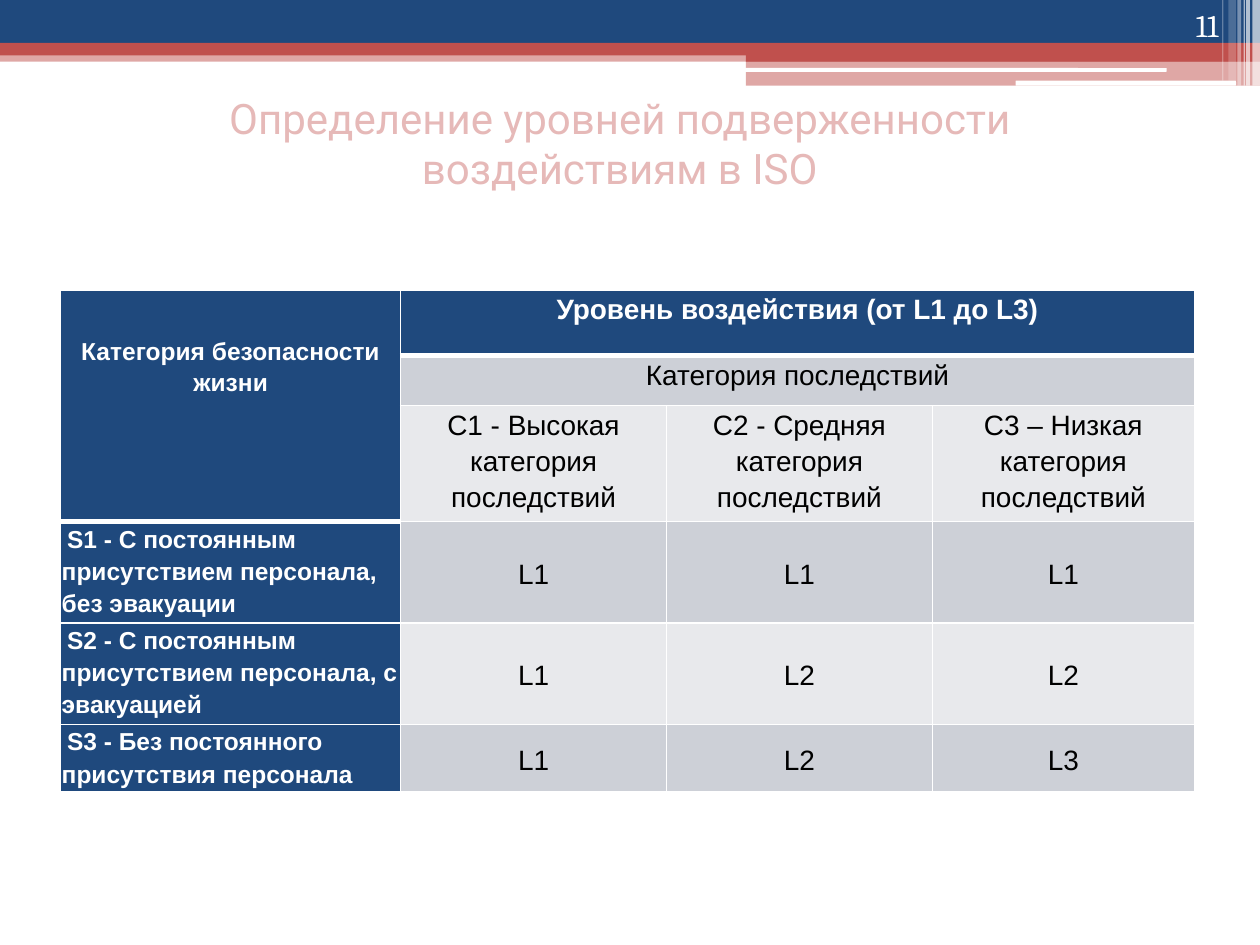
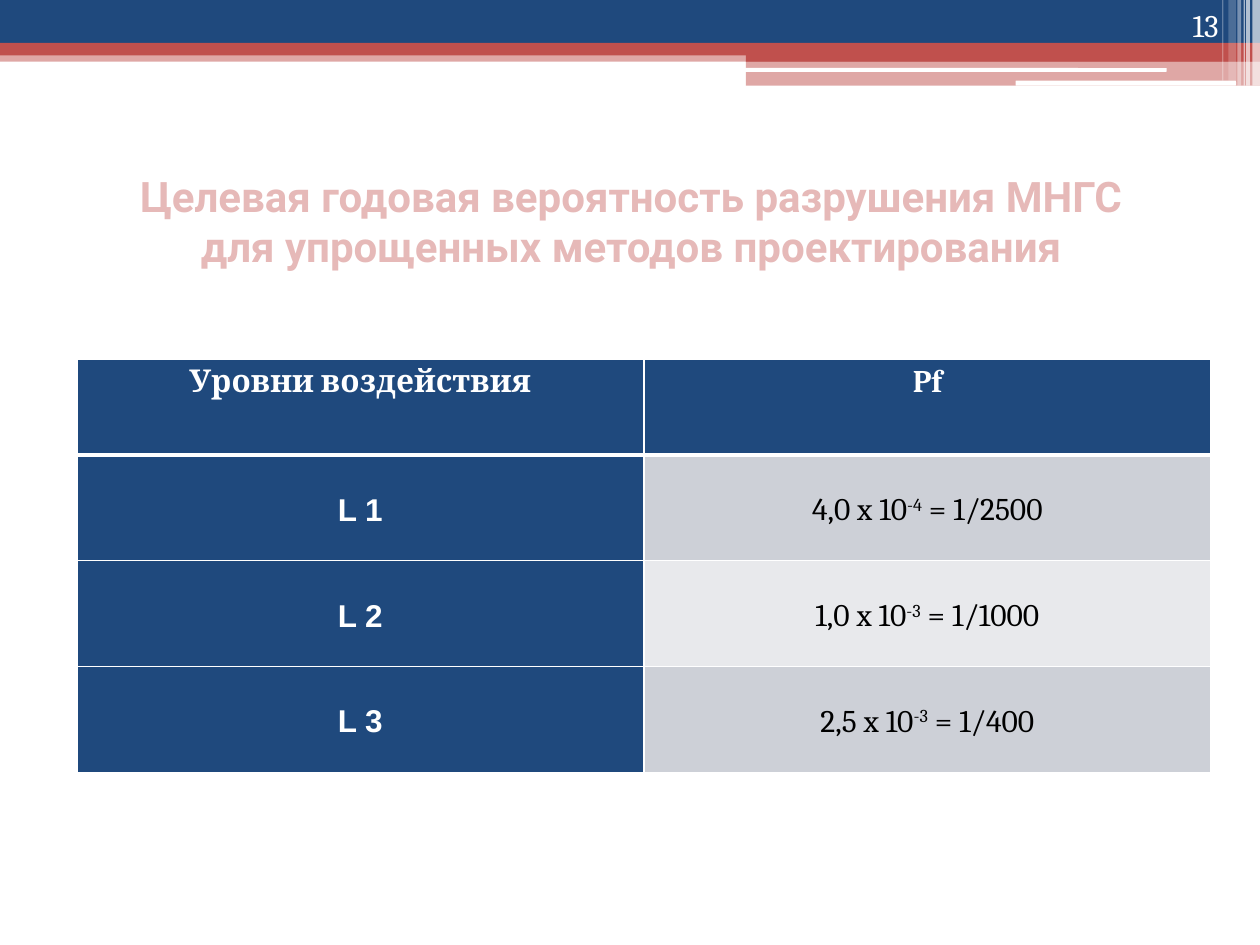
from dataclasses import dataclass, replace

from pptx import Presentation
from pptx import util as u
from pptx.dml.color import RGBColor
from pptx.enum import shapes, text
from pptx.oxml import ns, parse_xml

LEFT, CENTER, RIGHT = text.PP_ALIGN.LEFT, text.PP_ALIGN.CENTER, text.PP_ALIGN.RIGHT
TOP, MIDDLE, BOTTOM = (text.MSO_ANCHOR.TOP, text.MSO_ANCHOR.MIDDLE,
                       text.MSO_ANCHOR.BOTTOM)


@dataclass(frozen=True)
class Type:
    """Look of one run of text."""
    font: str
    size: int
    color: str
    bold: bool = False
    raised: bool = False


class Theme:
    navy, red, pink = "1F497D", "C0504D", "E6B9B8"
    white, black = "FFFFFF", "000000"
    stripes = ("CDD0D7", "E8E9EC")
    title = Type("Roboto", 24, pink)
    number = Type("Cambria", 18, white)
    row_head = Type("Arial", 14, white, True)
    wide_head = Type("Arial", 16, white, True)
    level = Type("Arial", 16, black)
    big_head = Type("Cambria", 18, white, True)
    big_level = Type("Arial", 18, white, True)
    value = Type("Cambria", 18, black)
    line_spacing = 1.15
    thin, thick = 1, 3


class Deck:
    """Holds the theme, the presentation and the current slide."""

    def __init__(self, theme):
        self.theme = theme
        self.prs = Presentation()
        self.prs.slide_width, self.prs.slide_height = u.Inches(10), u.Inches(7.5)
        self.s = None

    def new_slide(self, number):
        self.s = self.prs.slides.add_slide(self.prs.slide_layouts[6])
        self.header()
        self.label((8.94, 0, 0.83, 0.4), number, self.theme.number, RIGHT)

    def bar(self, box, color, opacity=100, kind=shapes.MSO_SHAPE.RECTANGLE):
        sp = self.s.shapes.add_shape(kind, *map(u.Inches, box))
        sp.shadow.inherit = False
        sp.line.fill.background()
        sp.fill.solid()
        sp.fill.fore_color.rgb = RGBColor.from_string(color)
        if opacity < 100:
            clr = sp._element.spPr.find(ns.qn("a:solidFill"))[0]
            clr.append(parse_xml(f'<a:alpha {ns.nsdecls("a")} val="{opacity * 1000}"/>'))

    def header(self):
        t = self.theme
        # Full-width bands and the wider step on the right
        self.bar((0, 0.4, 10, 0.09), t.red, 50)
        self.bar((0, 0, 10, 0.34), t.navy)
        self.bar((0, 0.34, 10, 0.1), t.red)
        self.bar((5.92, 0.39, 4.08, 0.1), t.red)
        self.bar((5.92, 0.48, 4.08, 0.2), t.red, 50)
        # White strips cut into the step
        for box in ((5.91, 0.54, 3.35, 0.03), (8.06, 0.64, 1.75, 0.04)):
            self.bar(box, t.white, kind=shapes.MSO_SHAPE.ROUNDED_RECTANGLE)
        # Translucent vertical stripes at the right edge
        for x, width, height, opacity in (
                (9.94, 0.06, 0.68, 65), (9.89, 0.03, 0.68, 65),
                (9.87, 0.01, 0.68, 60), (9.82, 0.03, 0.68, 40),
                (9.75, 0.06, 0.64, 20), (9.7, 0.01, 0.64, 30)):
            self.bar((x, 0, width, height), t.white, opacity)

    def add_runs(self, p, runs, align):
        p.alignment = align
        for words, style in runs:
            r = p.add_run()
            r.text = words
            r.font.name, r.font.size = style.font, u.Pt(style.size)
            r.font.bold = style.bold
            r.font.color.rgb = RGBColor.from_string(style.color)
            if style.raised:
                r._r.get_or_add_rPr().set("baseline", "30000")

    def label(self, box, words, style, align=CENTER):
        tf = self.s.shapes.add_textbox(*map(u.Inches, box)).text_frame
        tf.word_wrap = True
        tf.vertical_anchor = BOTTOM
        self.add_runs(tf.paragraphs[0], [(words, style)], align)

    def title(self, left, top, words, bold=False):
        self.label((left, top, 8.5, 1), words, replace(self.theme.title, bold=bold))

    def table(self, left, top, cols, rows, inset):
        frame = self.s.shapes.add_table(
            len(rows), len(cols), u.Inches(left), u.Inches(top),
            u.Inches(sum(cols)), u.Inches(sum(rows)))
        tbl = frame.table
        for col, width in zip(tbl.columns, cols):
            col.width = u.Inches(width)
        for row, height in zip(tbl.rows, rows):
            row.height = u.Inches(height)
        for cell in tbl.iter_cells():
            cell.margin_left = cell.margin_right = u.Inches(inset)
            cell.margin_top = cell.margin_bottom = 0
            for side in "LRTB":
                cell._tc.get_or_add_tcPr().append(parse_xml(
                    f'<a:ln{side} {ns.nsdecls("a")} w="{u.Pt(self.theme.thin)}">'
                    f'<a:solidFill><a:srgbClr val="{self.theme.white}"/></a:solidFill>'
                    f'</a:ln{side}>'))
        return tbl

    def cell(self, cell, runs, fill, align=CENTER, anchor=MIDDLE, after=0):
        cell.fill.solid()
        cell.fill.fore_color.rgb = RGBColor.from_string(fill)
        cell.vertical_anchor = anchor
        p = cell.text_frame.paragraphs[0]
        p.line_spacing = self.theme.line_spacing
        p.space_after = u.Pt(after)
        self.add_runs(p, runs, align)

    def thicken(self, cell, side):
        line = cell._tc.tcPr.find(ns.qn(f"a:ln{side}"))
        line.set("w", str(u.Pt(self.theme.thick)))

    def rule_under(self, tbl, row, cols):
        for c in cols:
            self.thicken(tbl.cell(row, c), "B")
            self.thicken(tbl.cell(row + 1, c), "T")


def exposure_levels(d):
    t = d.theme
    d.new_slide("11")
    d.title(0.67, 0.58, "Определение уровней подверженности воздействиям в ISO")
    tbl = d.table(0.48, 2.3, (2.7, 2.11, 2.11, 2.08),
                  (0.52, 0.4, 0.86, 0.76, 0.76, 0.51), 0.01)

    # Merged headings
    corner = tbl.cell(0, 0)
    corner.merge(tbl.cell(2, 0))
    for row in (0, 1):
        tbl.cell(row, 1).merge(tbl.cell(row, 3))
    d.cell(corner, [("Категория безопасности жизни", t.row_head)], t.navy,
           anchor=TOP, after=6)
    corner.margin_top = u.Inches(0.35)
    d.cell(tbl.cell(0, 1), [("Уровень воздействия (от L1 до L3)", t.wide_head)],
           t.navy, anchor=TOP, after=6)
    d.cell(tbl.cell(1, 1), [("Категория последствий", t.level)], t.stripes[0],
           anchor=TOP, after=6)

    # Consequence categories
    for c, grade in enumerate(("C1 - Высокая", "C2 - Средняя", "C3 – Низкая"), 1):
        d.cell(tbl.cell(2, c), [(f"{grade} категория последствий", t.level)],
               t.stripes[1], anchor=TOP, after=6)

    # Life-safety categories and their levels
    safety = (
        ("S1 - С постоянным присутствием персонала, без эвакуации", ("L1", "L1", "L1")),
        ("S2 - С постоянным присутствием персонала, с эвакуацией", ("L1", "L2", "L2")),
        ("S3 - Без постоянного присутствия персонала", ("L1", "L2", "L3")),
    )
    space = (" ", replace(t.row_head, font="Cambria"))
    for i, (category, levels) in enumerate(safety):
        d.cell(tbl.cell(3 + i, 0), [space, (category, t.row_head)], t.navy, LEFT, TOP)
        for c, level in enumerate(levels, 1):
            d.cell(tbl.cell(3 + i, c), [(level, t.level)], t.stripes[i % 2])

    d.rule_under(tbl, 0, range(1, 4))
    d.rule_under(tbl, 2, [0])
    d.thicken(corner, "B")


def target_probability(d):
    t = d.theme
    d.new_slide("13")
    d.title(0.76, 1.2, "Целевая годовая вероятность разрушения МНГС "
            "для упрощенных методов проектирования", bold=True)
    tbl = d.table(0.61, 2.85, (4.5, 4.5), (0.76, 0.84, 0.84, 0.84), 0.07)

    for c, heading in enumerate(("Уровни воздействия", "Pf")):
        d.cell(tbl.cell(0, c), [(heading, t.big_head)], t.navy, anchor=TOP)

    # Annual probability for each level
    probabilities = (("4,0", "-4", "1/2500"), ("1,0", "-3", "1/1000"),
                     ("2,5", "-3", "1/400"))
    for i, (factor, power, ratio) in enumerate(probabilities, 1):
        d.cell(tbl.cell(i, 0), [(f"L {i}", t.big_level)], t.navy)
        d.cell(tbl.cell(i, 1),
               [(f"{factor} x 10", t.value), (power, replace(t.value, raised=True)),
                (f" = {ratio}", t.value)], t.stripes[(i - 1) % 2])
    d.rule_under(tbl, 0, range(2))


def main():
    d = Deck(Theme())
    exposure_levels(d)
    target_probability(d)
    d.prs.save("out.pptx")


if __name__ == "__main__":
    main()
